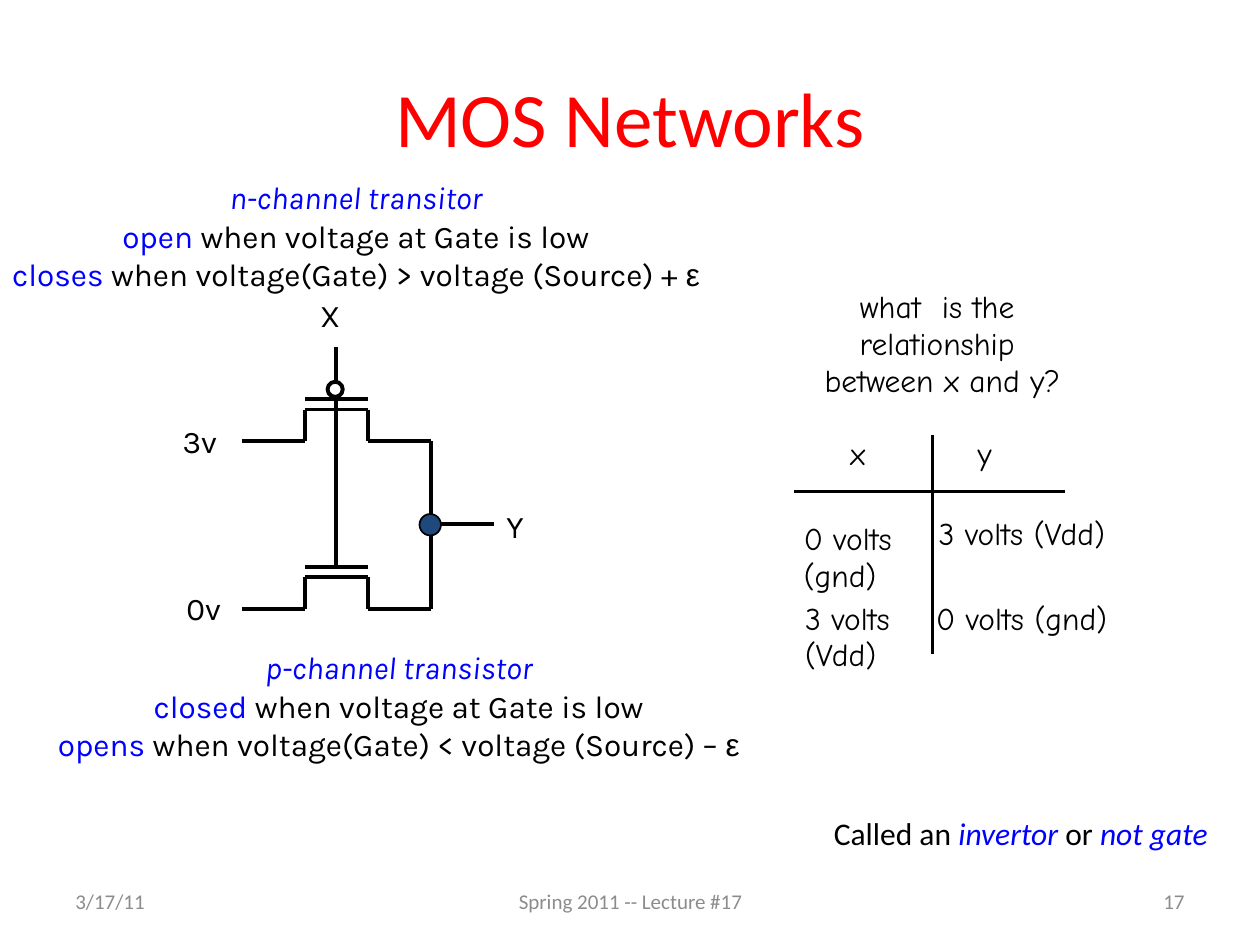
from pptx import Presentation
from pptx.dml.color import RGBColor
from pptx.enum.shapes import MSO_CONNECTOR, MSO_SHAPE
from pptx.enum.text import MSO_ANCHOR, PP_ALIGN
from pptx.oxml.ns import qn
from pptx.util import Inches, Pt
from lxml.etree import SubElement

BLACK = RGBColor(0, 0, 0)
WHITE = RGBColor(0xFF, 0xFF, 0xFF)
RED = RGBColor(0xFF, 0, 0)
BLUE = RGBColor(0, 0, 0xFF)
NAVY = RGBColor(0x1F, 0x49, 0x7D)
GRAY = RGBColor(0x8C, 0x8C, 0x8C)
LEFT, CENTER, RIGHT = PP_ALIGN.LEFT, PP_ALIGN.CENTER, PP_ALIGN.RIGHT

TIGHT = {
    "margin_left": Inches(0.02),
    "margin_right": Inches(0.02),
    "margin_top": Inches(0.03),
    "margin_bottom": Inches(0.03),
    "word_wrap": False,
}
MIDDLE = {"vertical_anchor": MSO_ANCHOR.MIDDLE, "word_wrap": True}
LOOSE = {"word_wrap": False}

presentation = Presentation()
presentation.slide_width = Inches(10)
presentation.slide_height = Inches(7.5)
slide = presentation.slides.add_slide(presentation.slide_layouts[6])


def add_text(box, lines, font, size=18, align=LEFT, spacing=None, frame_format=TIGHT):
    frame = slide.shapes.add_textbox(*map(Inches, box)).text_frame
    for name, value in frame_format.items():
        setattr(frame, name, value)
    paragraph = frame.paragraphs[0]
    paragraph.alignment = align
    if spacing:
        paragraph.line_spacing = Pt(spacing)
    for index, line in enumerate(lines):
        if index:
            paragraph.add_line_break()
        for text, color, *changes in line:
            run = paragraph.add_run()
            run.text = text
            run.font.color.rgb = color
            run_format = {"name": font, "size": Pt(size)}
            for change in changes:
                run_format.update(change)
            for name, value in run_format.items():
                setattr(run.font, name, value)


def add_wire(x1, y1, x2, y2, width=2.25):
    wire = slide.shapes.add_connector(
        MSO_CONNECTOR.STRAIGHT, Inches(x1), Inches(y1), Inches(x2), Inches(y2)
    )
    wire.line.color.rgb = BLACK
    wire.line.width = Pt(width)
    SubElement(wire._element.spPr, qn("a:effectLst"))


ITALIC = {"italic": True}
ARIAL = {"name": "Arial"}

add_text((0.5, 0.3, 9, 1.25), [[("MOS Networks", RED)]], "Calibri", 44, CENTER,
         frame_format=MIDDLE)

for left, width, footer, align in (
    (0.5, 2.33, "3/17/11", LEFT),
    (3.42, 3.17, "Spring 2011 -- Lecture #17", CENTER),
    (7.17, 2.33, "17", RIGHT),
):
    add_text((left, 6.95, width, 0.4), [[(footer, GRAY)]], "Calibri", 12, align,
             frame_format=MIDDLE)

supply_y, ground_y = 3.5, 4.83
add_wire(3.42, supply_y, 3.42, ground_y)
add_wire(3.42, 4.16, 3.92, 4.16)
add_wire(2.67, 4.34, 2.67, 2.75)
for base in (ground_y, supply_y):
    channel, gate = base - 0.25, base - 0.33
    add_wire(1.92, base, 2.42, base)
    add_wire(2.42, base, 2.42, channel)
    add_wire(2.42, channel, 2.92, channel)
    add_wire(2.92, channel, 2.92, base)
    add_wire(2.92, base, 3.42, base)
    add_wire(2.42, gate, 2.92, gate)
    add_wire(2.67, gate, 2.67, gate - 0.25)

for left, top, diameter, fill, width in (
    (2.6, 3.03, 0.12, WHITE, 2.25),
    (3.33, 4.08, 0.17, NAVY, 1),
):
    node = slide.shapes.add_shape(
        MSO_SHAPE.OVAL, Inches(left), Inches(top), Inches(diameter), Inches(diameter)
    )
    node.shadow.inherit = False
    node.fill.solid()
    node.fill.fore_color.rgb = fill
    node.line.color.rgb = BLACK
    node.line.width = Pt(width)

for left, top, terminal in (
    (2.52, 2.33, "X"),
    (4, 4, "Y"),
    (1.43, 3.33, "3v"),
    (1.46, 4.65, "0v"),
):
    add_text((left, top, 0.4, 0.45), [[(terminal, BLACK)]], "Karla", spacing=21)

for left, top, width, kind, low_state, high_state, condition in (
    (0.02, 1.38, 5.61, "n-channel transitor", "open ", "closes ",
     "when voltage(Gate) > voltage (Source) + "),
    (0.36, 5.11, 5.61, "p-channel transistor", "closed ", "opens ",
     "when voltage(Gate) < voltage (Source) – "),
):
    rule = [
        [(kind, BLUE, ITALIC)],
        [(low_state, BLUE), ("when voltage at Gate is low", BLACK)],
        [(high_state, BLUE), (condition, BLACK), ("ε", BLACK, ARIAL)],
    ]
    add_text((left, top, width, 1.37), rule, "Karla", align=CENTER, spacing=22)

question = [[(line, BLACK)] for line in ("what  is the ", "relationship ", "between x and y?")]
add_text((6.33, 2.26, 2.3, 1.03), question, "Comic Neue", align=CENTER, spacing=21)

add_wire(6.3, 3.9, 8.45, 3.9, 2)
add_wire(7.4, 3.45, 7.4, 5.19, 2)
for left, top, width, entry in (
    (6.73, 3.42, 0.4, ["x"]),
    (7.74, 3.42, 0.4, ["y"]),
    (6.36, 4.1, 0.97, ["0 volts ", "(gnd)"]),
    (7.43, 4.06, 1.5, ["3 volts (Vdd)"]),
    (6.37, 4.73, 0.97, ["3 volts", "(Vdd)"]),
    (7.41, 4.73, 1.5, ["0 volts (gnd)"]),
):
    add_text((left, top, width, 0.45), [[(line, BLACK)] for line in entry],
             "Comic Neue", spacing=21)

conclusion = [
    ("Called an ", BLACK),
    ("invertor ", BLUE, ITALIC),
    ("or ", BLACK),
    ("not gate", BLUE, ITALIC),
]
add_text((6.52, 6.41, 3.26, 0.4), [conclusion], "Calibri", frame_format=LOOSE)

presentation.save("out.pptx")
